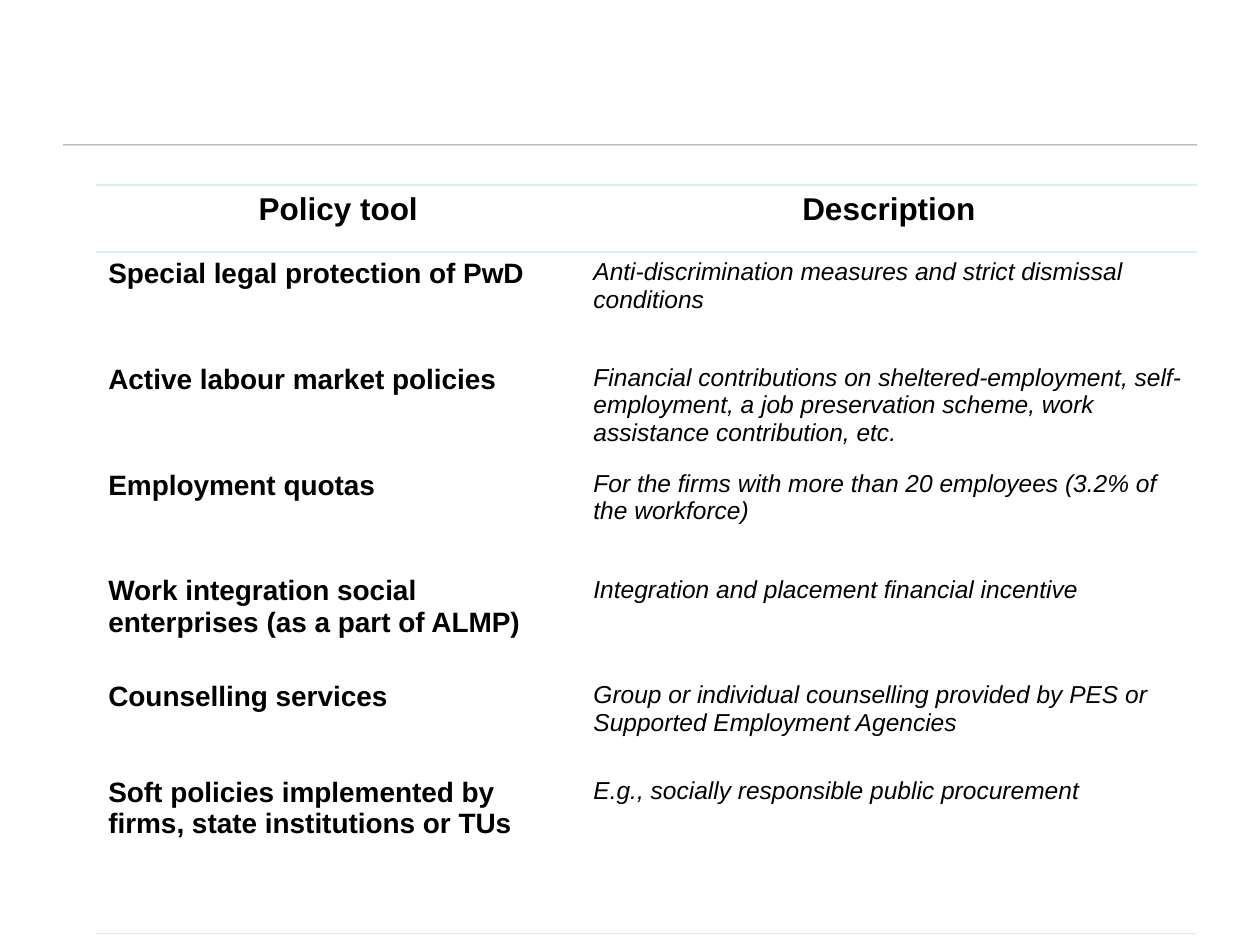
from lxml.etree import SubElement
from pptx import Presentation
from pptx.dml.color import RGBColor
from pptx.enum.shapes import MSO_CONNECTOR as Connector
from pptx.enum.text import PP_ALIGN as Align
from pptx.oxml.ns import qn
from pptx.util import Inches, Pt

BLACK = RGBColor(0x00, 0x00, 0x00)
PALE_TEAL = RGBColor(0xDA, 0xED, 0xEF)
FONT = "Arial"

HEADER = ("Policy tool", "Description")
POLICIES = [
    ("Special legal protection of PwD",
     "Anti-discrimination measures and strict dismissal conditions"),
    ("Active labour market policies",
     "Financial contributions on sheltered-employment, self-employment, "
     "a job preservation scheme, work assistance contribution, etc."),
    ("Employment quotas",
     "For the firms with more than 20 employees (3.2% of the workforce)"),
    ("Work integration social enterprises (as a part of ALMP)",
     "Integration and placement financial incentive"),
    ("Counselling services",
     "Group or individual counselling provided by PES or Supported Employment Agencies"),
    ("Soft policies implemented by firms, state institutions or TUs",
     "E.g., socially responsible public procurement"),
]
COLUMN_WIDTHS = (3.85, 4.89)
ROW_HEIGHTS = (0.53, 0.84, 0.84, 0.84, 0.84, 0.76, 1.29)


def add_divider(slide):
    divider = slide.shapes.add_connector(
        Connector.STRAIGHT, Inches(0.5), Inches(1.15), Inches(9.5), Inches(1.15))
    divider.line.color.rgb = BLACK
    divider.line.width = Pt(0.5)
    properties = divider._element.spPr
    color = properties.find(".//" + qn("a:srgbClr"))
    SubElement(color, qn("a:alpha"), val="40000")
    SubElement(properties, qn("a:effectLst"))


def set_borders(cell, visible_sides):
    properties = cell._tc.get_or_add_tcPr()
    for side in ("L", "R", "T", "B"):
        border = SubElement(properties, qn(f"a:ln{side}"), w=str(Pt(1)))
        if side in visible_sides:
            fill = SubElement(border, qn("a:solidFill"))
            SubElement(fill, qn("a:srgbClr"), val=str(PALE_TEAL))
        else:
            SubElement(border, qn("a:noFill"))


def write_cell(cell, text, size, bold, align):
    paragraph = cell.text_frame.paragraphs[0]
    paragraph.alignment = align
    run = paragraph.add_run()
    run.text = text
    run.font.name = FONT
    run.font.size = Pt(size)
    run.font.bold = bold
    run.font.italic = not bold
    run.font.color.rgb = BLACK


def add_policy_table(slide):
    rows = [HEADER] + POLICIES
    table = slide.shapes.add_table(
        len(rows), len(HEADER), Inches(0.76), Inches(1.47),
        Inches(sum(COLUMN_WIDTHS)), Inches(sum(ROW_HEIGHTS))).table
    table.first_row = False
    table.horz_banding = False
    for column, width in zip(table.columns, COLUMN_WIDTHS):
        column.width = Inches(width)
    for row, height in zip(table.rows, ROW_HEIGHTS):
        row.height = Inches(height)

    border_sides = {0: "TB", 1: "T", len(rows) - 1: "B"}
    for row_index, texts in enumerate(rows):
        for column_index, text in enumerate(texts):
            cell = table.cell(row_index, column_index)
            set_borders(cell, border_sides.get(row_index, ""))
            cell.fill.background()
            if row_index == 0:
                write_cell(cell, text, 18, True, Align.CENTER)
            elif column_index == 0:
                write_cell(cell, text, 16, True, Align.LEFT)
            else:
                write_cell(cell, text, 14, False, Align.LEFT)


def main():
    presentation = Presentation()
    presentation.slide_width = Inches(10)
    presentation.slide_height = Inches(7.5)
    slide = presentation.slides.add_slide(presentation.slide_layouts[6])
    add_divider(slide)
    add_policy_table(slide)
    presentation.save("out.pptx")


if __name__ == "__main__":
    main()
